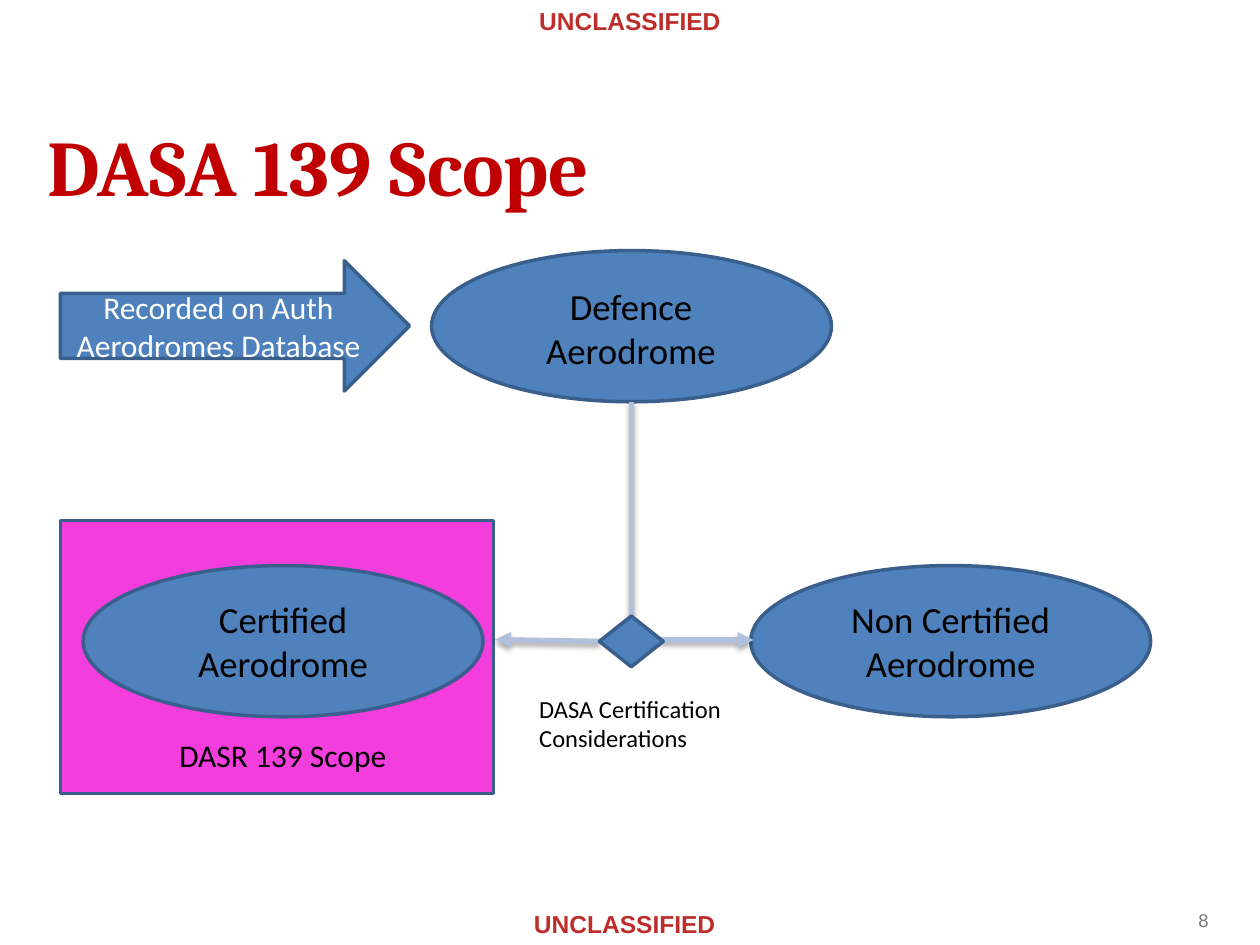
"""Build the DASA 139 scope slide."""
from dataclasses import dataclass

from lxml.etree import SubElement
from pptx import Presentation
from pptx.dml.color import RGBColor
from pptx.enum.shapes import MSO_CONNECTOR, MSO_SHAPE as Preset
from pptx.enum.text import MSO_ANCHOR as Anchor, PP_ALIGN as Align
from pptx.oxml.ns import qn
from pptx.util import Pt

BLUE, OUTLINE, LINK = "4F81BD", "3A5F8C", "B2C1DB"
MAGENTA, RED, MARKING = "F33DDD", "C00000", "BD2E2B"
BLACK, WHITE, GREY = "000000", "FFFFFF", "777777"


@dataclass
class Box:
    left: float
    top: float
    width: float
    height: float

    def lengths(self) -> tuple:
        return Pt(self.left), Pt(self.top), Pt(self.width), Pt(self.height)


@dataclass
class Node:
    preset: int
    box: Box
    text: str = ""
    size: float = 21
    color: str = BLACK
    fill: str = BLUE


@dataclass
class Link:
    start: tuple[float, float]
    end: tuple[float, float]
    arrow: bool = True


@dataclass
class Label:
    box: Box
    text: str
    size: float
    font: str = "Calibri"
    color: str = BLACK
    bold: bool = False
    align: int = Align.CENTER
    anchor: int = Anchor.TOP


def rgb(value: str) -> RGBColor:
    return RGBColor.from_string(value)


def write(frame, text: str, *, size: float, font: str = "Calibri", color: str = BLACK,
          bold: bool = False, align: int = Align.CENTER, anchor: int = Anchor.MIDDLE) -> None:
    frame.word_wrap = True
    frame.vertical_anchor = anchor
    frame.text = text
    for paragraph in frame.paragraphs:
        paragraph.alignment = align
        paragraph.font.size = Pt(size)
        paragraph.font.name = font
        paragraph.font.bold = bold
        paragraph.font.color.rgb = rgb(color)


def draw_node(slide, node: Node) -> None:
    shape = slide.shapes.add_shape(node.preset, *node.box.lengths())
    shape.shadow.inherit = False
    shape.fill.solid()
    shape.fill.fore_color.rgb = rgb(node.fill)
    shape.line.color.rgb = rgb(OUTLINE)
    shape.line.width = Pt(2)
    if node.text:
        write(shape.text_frame, node.text, size=node.size, color=node.color)


def draw_label(slide, label: Label) -> None:
    frame = slide.shapes.add_textbox(*label.box.lengths()).text_frame
    write(frame, label.text, size=label.size, font=label.font, color=label.color,
          bold=label.bold, align=label.align, anchor=label.anchor)


def draw_link(slide, link: Link) -> None:
    connector = slide.shapes.add_connector(
        MSO_CONNECTOR.STRAIGHT, *map(Pt, link.start + link.end))
    connector.line.color.rgb = rgb(LINK)
    connector.line.width = Pt(3)
    if link.arrow:
        SubElement(connector.line._get_or_add_ln(), qn("a:tailEnd"), type="triangle")
    effects = SubElement(connector._element.spPr, qn("a:effectLst"))
    shadow = SubElement(effects, qn("a:outerShdw"), blurRad=str(Pt(3.1)),
                        dist=str(Pt(1.8)), dir="5400000", rotWithShape="0")
    tint = SubElement(shadow, qn("a:srgbClr"), val=BLACK)
    SubElement(tint, qn("a:alpha"), val="35000")


def aerodrome(left: float, top: float, text: str = "") -> Node:
    return Node(Preset.OVAL, Box(left, top, 228.5, 86.4), text)


def marking(box: Box) -> Label:
    return Label(box, "UNCLASSIFIED", 14, "Arial", MARKING, True)


NODES = [
    Node(Preset.RECTANGLE, Box(34.5, 297.5, 247.5, 156), fill=MAGENTA),
    aerodrome(246.6, 143.2),
    Node(Preset.RIGHT_ARROW, Box(34.5, 149, 199.5, 74.5),
         "Recorded on Auth\nAerodromes Database", 18, WHITE),
    aerodrome(47.5, 323.2, "Certified\nAerodrome"),
    aerodrome(429, 323.2, "Non Certified\nAerodrome"),
]
DECISION = Node(Preset.FLOWCHART_DECISION, Box(342.5, 352, 36.5, 29))
LINKS = [
    Link((360.7, 229.6), (360.7, 352), arrow=False),
    Link((372.5, 365.7), (430.5, 365.7)),
    Link((342.5, 366.5), (283, 365.5)),
]
LABELS = [
    marking(Box(0, 0, 720, 24)),
    marking(Box(297.5, 516, 119, 24)),
    Label(Box(302.2, 158.4, 116.8, 58.3), "Defence\nAerodrome", 21),
    Label(Box(82.8, 417, 157.7, 29), "DASR 139 Scope", 18),
    Label(Box(530, 511.2, 167.7, 28.8), "8", 10.5, "Arial", GREY,
          align=Align.RIGHT, anchor=Anchor.MIDDLE),
    Label(Box(301, 393, 121.7, 41), "DASA Certification Considerations", 14,
          align=Align.LEFT),
]


def main() -> None:
    deck = Presentation()
    deck.slide_width, deck.slide_height = Pt(720), Pt(540)
    slide = deck.slides.add_slide(deck.slide_layouts[5])
    title = slide.shapes.title
    title.left, title.top, title.width, title.height = Box(20.2, 92.2, 486, 33).lengths()
    write(title.text_frame, "DASA 139 Scope", size=45, font="Cambria", color=RED,
          bold=True, align=Align.LEFT, anchor=Anchor.BOTTOM)
    for node in NODES:
        draw_node(slide, node)
    for link in LINKS:
        draw_link(slide, link)
    draw_node(slide, DECISION)
    for label in LABELS:
        draw_label(slide, label)
    deck.save("out.pptx")


if __name__ == "__main__":
    main()
